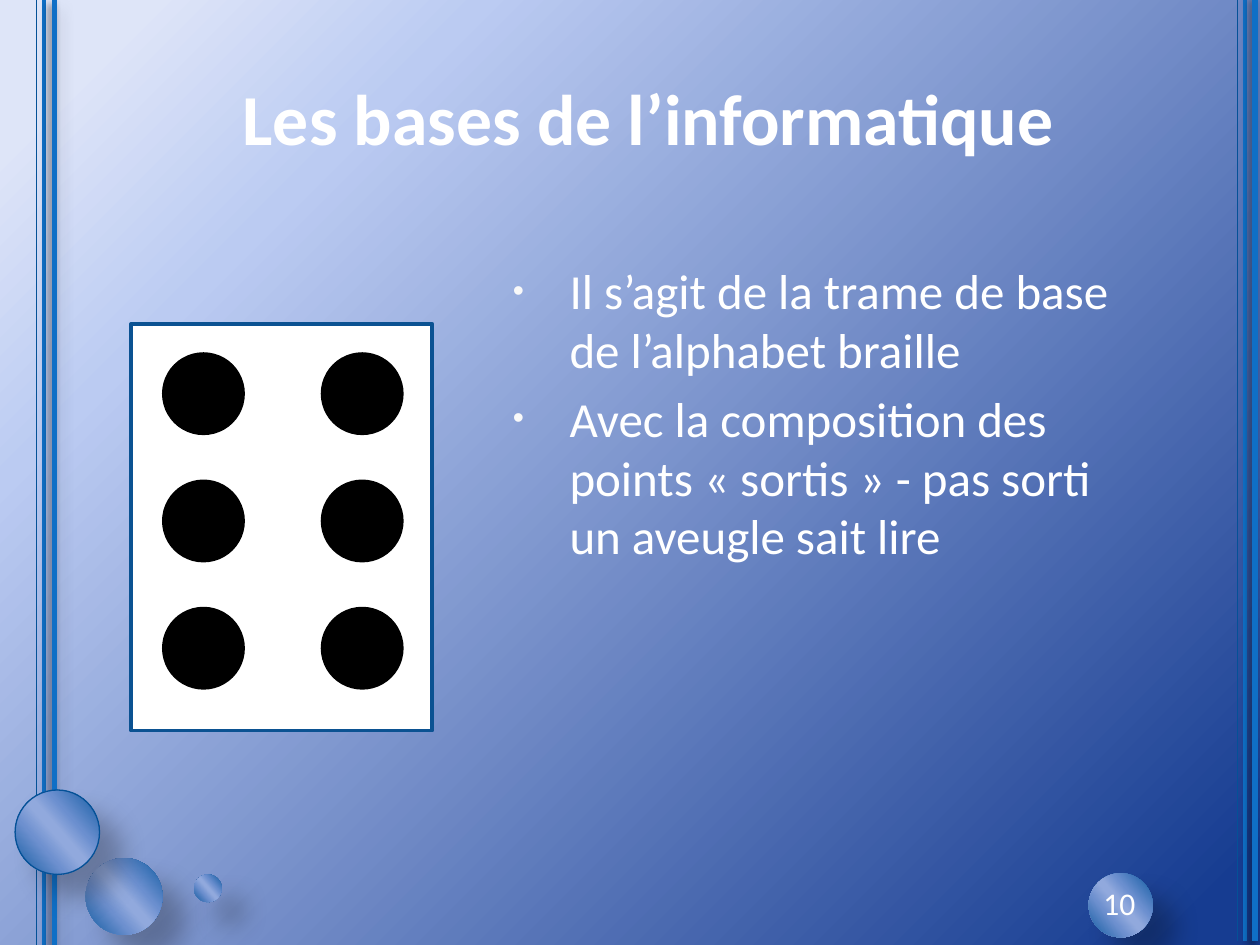
from itertools import product

from lxml.etree import SubElement
from pptx import Presentation
from pptx.dml.color import RGBColor
from pptx.enum.shapes import MSO_CONNECTOR, MSO_SHAPE
from pptx.enum.text import MSO_ANCHOR, MSO_AUTO_SIZE, PP_ALIGN
from pptx.oxml import parse_xml
from pptx.oxml.ns import nsdecls, qn
from pptx.util import Inches, Pt

COLORS = {"white": "FFFFFF", "black": "000000", "bullet": "F9F9F9", "stripe": "0F6FC6",
          "edge": "045197", "frame": "0B5292"}
BACKDROP = [(4, "163C91"), (78, "BBCBF2"), (93, "DEE5F8")]
BUBBLE = [(0, "0C599F"), (33, "6B8FCF"), (47, "91A9DD"), (53, "91A9DD"),
          (68, "6D90CF"), (100, "0C599F")]
CORNER = '<a:path path="circle"><a:fillToRect l="100000" t="100000"/></a:path>'
SLANT = f'<a:lin ang="{139 * 60000}" scaled="0"/>'
STRIPES = [(0.06, "stripe", 2, (35, 10.2, 8, 45)), (0.14, "stripe", 3, (40, 4, 3, 135)),
           (0, "edge", 0.75, None)]
BUBBLE_SHADOW = (26, 15, 18, 45)
POINTS = ["Il s’agit de la trame de base de l’alphabet braille",
          "Avec la composition des points «\u00a0sortis\u00a0» - pas sorti un aveugle sait lire"]


def rgb(name):
    """Return the named colour."""
    return RGBColor.from_string(COLORS[name])


def paint_gradient(fill, owner, stops, direction):
    """Fill the owner with a gradient of the given stops."""
    fill.gradient()
    default = owner.find(".//" + qn("a:gradFill"))
    marks = "".join(f'<a:gs pos="{share * 1000}"><a:srgbClr val="{tint}"/></a:gs>'
                    for share, tint in stops)
    default.getparent().replace(default, parse_xml(
        f'<a:gradFill {nsdecls("a")} rotWithShape="1"><a:gsLst>{marks}</a:gsLst>'
        f'{direction}</a:gradFill>'))


def cast_shadow(effects, alpha, blur, distance, angle):
    """Add an outer shadow to an effect list."""
    shadow = SubElement(effects, qn("a:outerShdw"), blurRad=str(Pt(blur)),
                        dist=str(Pt(distance)), dir=str(angle * 60000))
    tint = SubElement(shadow, qn("a:srgbClr"), val=COLORS["black"])
    SubElement(tint, qn("a:alpha"), val=str(alpha * 1000))


def add_stripes(slide, left, top):
    """Draw one border of three vertical lines."""
    for offset, color, width, shadow in STRIPES:
        x = Inches(left + offset)
        stripe = slide.shapes.add_connector(
            MSO_CONNECTOR.STRAIGHT, x, Inches(top), x, Inches(top + 7.5))
        stripe.line.color.rgb = rgb(color)
        stripe.line.width = Pt(width)
        effects = SubElement(stripe._element.spPr, qn("a:effectLst"))
        if shadow:
            cast_shadow(effects, *shadow)


def add_plain(shapes, kind, left, top, width, height, line=None, weight=2):
    """Add a shape without shadow, with the given outline."""
    shape = shapes.add_shape(kind, Inches(left), Inches(top), Inches(width), Inches(height))
    shape.shadow.inherit = False
    if line:
        shape.line.color.rgb = rgb(line)
        shape.line.width = Pt(weight)
    else:
        shape.line.fill.background()
    return shape


def add_bubble(slide, left, top, size, line=None):
    """Add a shaded ball with a soft shadow."""
    bubble = add_plain(slide.shapes, MSO_SHAPE.OVAL, left, top, size, size, line, 0.75)
    properties = bubble._element.spPr
    paint_gradient(bubble.fill, properties, BUBBLE, SLANT)
    cast_shadow(properties.find(qn("a:effectLst")), *BUBBLE_SHADOW)


def add_braille_cell(slide):
    """Draw the grouped braille cell with two columns and three rows of dots."""
    cell = slide.shapes.add_group_shape().shapes
    card = add_plain(cell, MSO_SHAPE.RECTANGLE, 1.04, 2.57, 2.39, 3.23, "frame")
    card.fill.solid()
    card.fill.fore_color.rgb = rgb("white")
    for row, column in product(range(3), range(2)):
        dot = add_plain(cell, MSO_SHAPE.OVAL, 1.3 + 1.26 * column, 2.81 + 1.01 * row,
                        0.63, 0.63, "black")
        dot.fill.solid()
        dot.fill.fore_color.rgb = rgb("black")


def place(box, left, top, width, height):
    """Move and size a placeholder."""
    box.left, box.top = Inches(left), Inches(top)
    box.width, box.height = Inches(width), Inches(height)


def write(paragraph, words, size, bold=False):
    """Add a white run to a paragraph."""
    run = paragraph.add_run()
    run.text = words
    run.font.name = "Calibri"
    run.font.size = Pt(size)
    run.font.bold = bold
    run.font.color.rgb = rgb("white")


def set_bullet(paragraph):
    """Give a paragraph a hanging indent and a small bullet."""
    properties = paragraph._p.get_or_add_pPr()
    properties.set("marL", str(Inches(0.6)))
    properties.set("indent", str(Inches(-0.45)))
    tint = SubElement(properties, qn("a:buClr"))
    SubElement(tint, qn("a:srgbClr"), val=COLORS["bullet"])
    SubElement(properties, qn("a:buSzPct"), val="65000")
    SubElement(properties, qn("a:buChar"), char="•")


def add_title(slide):
    """Fill the title placeholder."""
    title = slide.shapes.title
    place(title, 0.65, 0.3, 9, 1.25)
    title.text_frame.auto_size = MSO_AUTO_SIZE.NONE
    title.text_frame.vertical_anchor = MSO_ANCHOR.MIDDLE
    heading = title.text_frame.paragraphs[0]
    heading.alignment = PP_ALIGN.CENTER
    write(heading, "Les bases de l’informatique", 41, True)


def add_points(slide):
    """Fill the body placeholder with the list."""
    body = slide.placeholders[1]
    place(body, 3.82, 2.02, 5.18, 4.84)
    frame = body.text_frame
    frame.auto_size = MSO_AUTO_SIZE.NONE
    for index, words in enumerate(POINTS):
        point = frame.add_paragraph() if index else frame.paragraphs[0]
        set_bullet(point)
        write(point, words, 28)


def add_page_number(slide):
    """Write the page number over its bubble."""
    number = slide.shapes.add_textbox(Inches(8.66), Inches(6.97), Inches(0.83), Inches(0.4))
    number.text_frame.word_wrap = True
    write(number.text_frame.paragraphs[0], "10", 18)


def main():
    """Build and save the slide."""
    deck = Presentation()
    deck.slide_width, deck.slide_height = Inches(10), Inches(7.5)
    slide = deck.slides.add_slide(deck.slide_layouts[1])
    paint_gradient(slide.background.fill, slide._element, BACKDROP, CORNER)
    add_stripes(slide, 0.29, 0)
    add_bubble(slide, 0.68, 6.81, 0.61)
    add_bubble(slide, 0.12, 6.27, 0.67, "edge")
    add_bubble(slide, 1.54, 6.94, 0.22)
    add_stripes(slide, 9.82, -0.03)
    add_bubble(slide, 8.64, 6.93, 0.51)
    add_title(slide)
    add_points(slide)
    add_page_number(slide)
    add_braille_cell(slide)
    deck.save("out.pptx")


if __name__ == "__main__":
    main()
